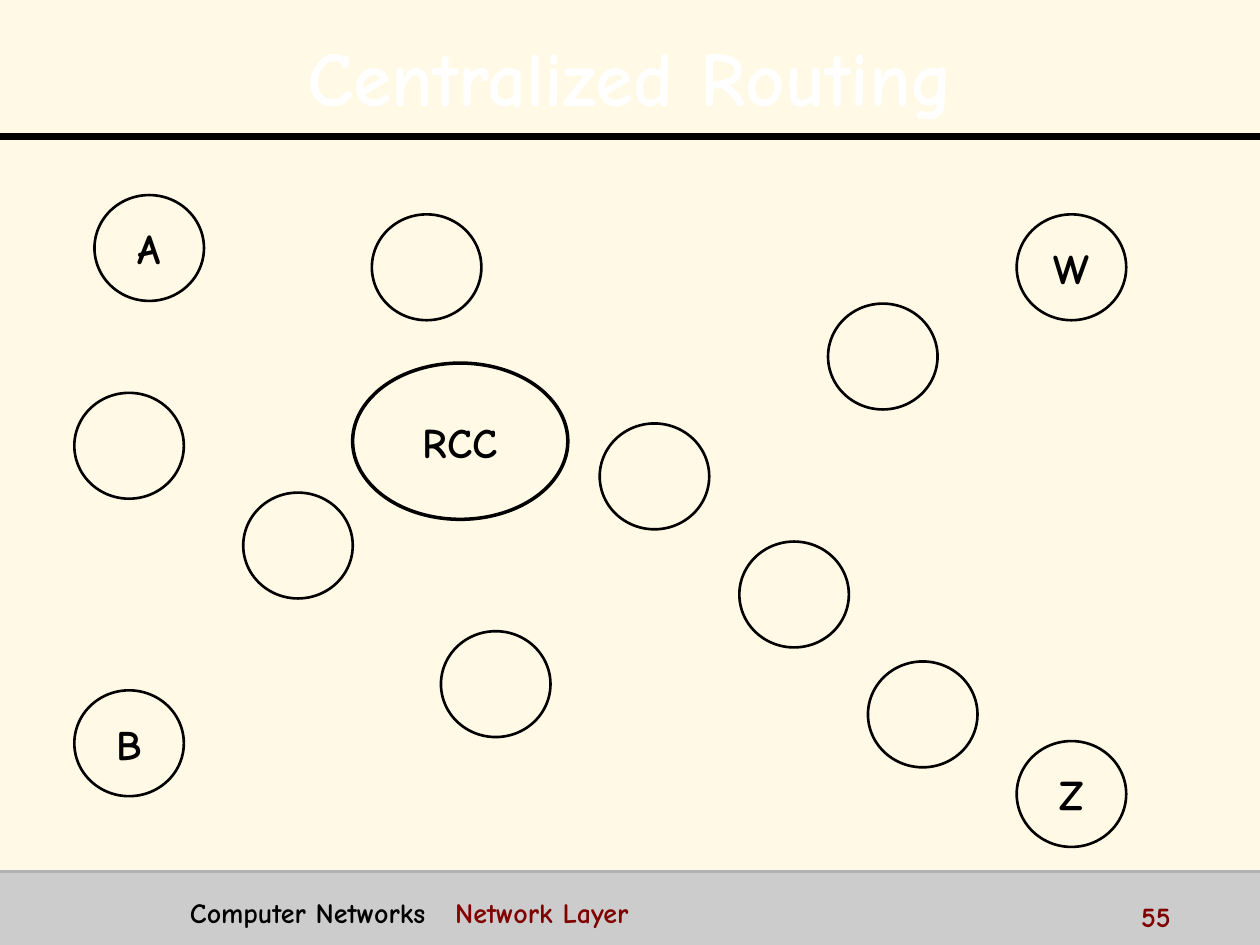
from lxml.etree import SubElement, fromstring
from pptx import Presentation
from pptx.dml.color import RGBColor
from pptx.enum.shapes import MSO_CONNECTOR, MSO_SHAPE
from pptx.enum.text import MSO_ANCHOR, PP_ALIGN
from pptx.oxml.ns import qn
from pptx.util import Pt

INK, RED, WHITE = "000000", "800000", "FFFFFF"
CREAM, GREY, EDGE = "FFF9E6", "CCCCCC", "B2B2B2"
WIDE, HIGH = 720, 540
NODE = (62.6, 60.5)
NODES = [
    (54, 111.5, "A"), (581, 423.5, "Z"), (581, 122.5, "W"), (42.5, 394.5, "B"),
    (496, 378, ""), (422.5, 309.5, ""), (473.2, 173.5, ""), (342.7, 242, ""),
    (139, 281.5, ""), (212.5, 122.5, ""), (42.5, 224.5, ""), (252, 360.7, ""),
]
SHADE = (
    '<a:effectLst xmlns:a="http://schemas.openxmlformats.org/drawingml/2006/main">'
    '<a:outerShdw dist="25400" dir="2700000"><a:srgbClr val="000000"/>'
    '</a:outerShdw></a:effectLst>'
)


def tint(code):
    return RGBColor.from_string(code)


class Deck:
    """Hold the style and the current slide, and draw each kind of element."""

    def __init__(self, font):
        self.font = font
        self.show = Presentation()
        self.show.slide_width, self.show.slide_height = Pt(WIDE), Pt(HIGH)
        self.slide = self.show.slides.add_slide(self.show.slide_layouts[6])
        fill = self.slide.background.fill
        fill.solid()
        fill.fore_color.rgb = tint(CREAM)

    def style(self, run, size, color):
        font = run.font
        font.name, font.size, font.bold = self.font, Pt(size), True
        font.color.rgb = tint(color)

    def band(self, top, color):
        box = self.slide.shapes.add_shape(
            MSO_SHAPE.RECTANGLE, 0, Pt(top), Pt(WIDE), Pt(HIGH - top))
        box.shadow.inherit = False
        box.fill.solid()
        box.fill.fore_color.rgb = tint(color)
        box.line.fill.background()

    def rule(self, top, color, width):
        line = self.slide.shapes.add_connector(
            MSO_CONNECTOR.STRAIGHT, 0, Pt(top), Pt(WIDE), Pt(top))
        line.line.color.rgb = tint(color)
        line.line.width = Pt(width)
        SubElement(line._element.spPr, qn("a:effectLst"))

    def text(self, left, top, width, height, parts, size=16, tab=None):
        box = self.slide.shapes.add_textbox(Pt(left), Pt(top), Pt(width), Pt(height))
        box.text_frame.word_wrap = True
        para = box.text_frame.paragraphs[0]
        if tab:
            tabs = SubElement(para._p.get_or_add_pPr(), qn("a:tabLst"))
            SubElement(tabs, qn("a:tab"), pos=str(Pt(tab)), algn="l")
        for words, color in parts:
            run = para.add_run()
            run.text = words
            self.style(run, size, color)
        return box.text_frame

    def title(self, words):
        frame = self.text(14.4, 9.4, 692, 62.6, [(words, WHITE)], 44)
        frame.vertical_anchor = MSO_ANCHOR.MIDDLE
        para = frame.paragraphs[0]
        para.alignment, para.line_spacing = PP_ALIGN.CENTER, 1.1
        fill = para.runs[0].font._element.find(qn("a:solidFill"))
        fill.addnext(fromstring(SHADE))

    def node(self, left, top, label, size=NODE, width=1.5):
        oval = self.slide.shapes.add_shape(
            MSO_SHAPE.OVAL, Pt(left), Pt(top), Pt(size[0]), Pt(size[1]))
        oval.shadow.inherit = False
        oval.fill.background()
        oval.line.color.rgb = tint(INK)
        oval.line.width = Pt(width)
        if label:
            frame = oval.text_frame
            frame.text = label
            frame.word_wrap = False
            frame.vertical_anchor = MSO_ANCHOR.MIDDLE
            frame.paragraphs[0].alignment = PP_ALIGN.CENTER
            self.style(frame.paragraphs[0].runs[0], 24, INK)


def main():
    deck = Deck("Comic Neue")
    deck.band(498, GREY)
    deck.rule(78, INK, 4)
    deck.rule(498, EDGE, 2)
    deck.title("Centralized Routing")
    deck.text(101.5, 508.3, 524, 22.3,
              [("Computer Networks\t", INK), ("Network Layer", RED)], tab=151.5)
    deck.text(645, 510.5, 72, 18, [("55", RED)])
    deck.node(201.5, 207.5, "RCC", (123, 89.3), 2)
    for left, top, label in NODES:
        deck.node(left, top, label)
    deck.show.save("out.pptx")


if __name__ == "__main__":
    main()
